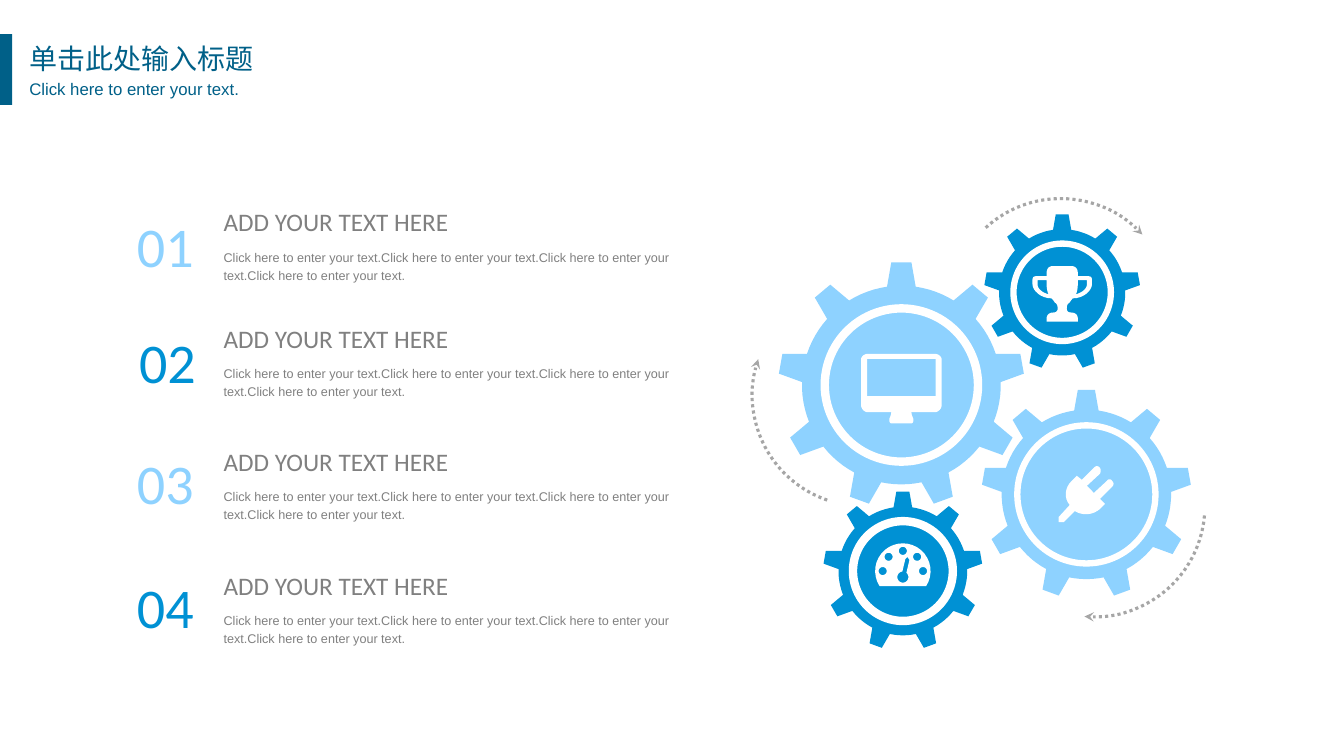
from dataclasses import dataclass
from math import cos, radians, sin

from pptx import Presentation
from pptx.dml.color import RGBColor
from pptx.enum.dml import MSO_LINE
from pptx.enum.shapes import MSO_SHAPE
from pptx.enum.text import MSO_ANCHOR, MSO_AUTO_SIZE, PP_ALIGN
from pptx.oxml.ns import qn
from pptx.util import Emu, Inches, Pt
from lxml import etree

ARC, OVAL, RECT = MSO_SHAPE.ARC, MSO_SHAPE.OVAL, MSO_SHAPE.RECTANGLE
LEFT, CENTER, JUSTIFY = PP_ALIGN.LEFT, PP_ALIGN.CENTER, PP_ALIGN.JUSTIFY
TOP, BOTTOM = MSO_ANCHOR.TOP, MSO_ANCHOR.BOTTOM
GROW = MSO_AUTO_SIZE.SHAPE_TO_FIT_TEXT
DOTTED = MSO_LINE.ROUND_DOT

WIDTH, HEIGHT = Inches(13.33), Inches(7.5)
ROWS = 75
CELL = HEIGHT / ROWS  # columns and rows are equally wide
SECTION_LAYOUT = 2

Point = tuple[float, float]
Contour = list[Point]


@dataclass(frozen=True)
class Theme:
    navy: RGBColor = RGBColor(0x00, 0x60, 0x88)
    blue: RGBColor = RGBColor(0x00, 0x91, 0xD4)
    sky: RGBColor = RGBColor(0x8E, 0xD2, 0xFF)
    gray: RGBColor = RGBColor(0x80, 0x80, 0x80)
    arrow: RGBColor = RGBColor(0xA6, 0xA6, 0xA6)
    white: RGBColor = RGBColor(0xFF, 0xFF, 0xFF)
    title_size: int = 20
    subtitle_size: int = 12
    number_size: int = 40
    heading_size: int = 18
    body_size: int = 9


THEME = Theme()


@dataclass(frozen=True)
class TextStyle:
    size: int
    font: str
    color: RGBColor
    align: PP_ALIGN = LEFT
    anchor: MSO_ANCHOR = TOP
    line_spacing: float = 1
    space_before: float = 0
    insets: Point = (1, 0.5)


@dataclass(frozen=True)
class Item:
    number: str
    color: RGBColor
    number_at: Point
    heading_row: float
    body_row: float


@dataclass(frozen=True)
class Gear:
    center: Point
    radius: float
    ring: float
    ring_width: float
    color: RGBColor


@dataclass(frozen=True)
class TurnArrow:
    left: float
    top: float
    rotation: float


TITLE = TextStyle(THEME.title_size, "Noto Sans CJK SC", THEME.navy)
SUBTITLE = TextStyle(THEME.subtitle_size, "Arial", THEME.navy, JUSTIFY, TOP, 1.2, 0.2, (0.4, 0.4))
HEADING = TextStyle(THEME.heading_size, "Calibri", THEME.gray)
BODY = TextStyle(THEME.body_size, "Arial", THEME.gray, LEFT, TOP, 1.2, 0.2)
PROMPT = "Click here to enter your text."

ITEMS = [
    Item("01", THEME.sky, (12.3, 21), 20, 24),
    Item("02", THEME.blue, (12.5, 32.5), 31.6, 35.5),
    Item("03", THEME.sky, (12.3, 44.5), 43.8, 47.7),
    Item("04", THEME.blue, (12.3, 56.8), 56.1, 60),
]
GEARS = [
    Gear((89.4, 38.2), 12.2, 7.6, 6, THEME.sky),
    Gear((107.75, 49.05), 10.4, 6.85, 4.5, THEME.sky),
    Gear((89.55, 56.65), 7.9, 4.95, 6, THEME.blue),
    Gear((105.35, 29), 7.75, 4.83, 4.5, THEME.blue),
]
ARROWS = [TurnArrow(94.2, 19.7, 317.5), TurnArrow(74.6, 28.2, 198.9), TurnArrow(97.5, 39.2, 94.9)]
ARROW_SPAN = 22


def emu(cells: float) -> Emu:
    return Emu(round(cells * CELL))


def curved(*steps: tuple[float, ...]) -> Contour:
    """Flatten steps: two numbers are a line's end, six a cubic Bézier."""
    points: Contour = []
    for s in steps:
        if len(s) == 2:
            points.append(s)
            continue
        x0, y0 = points[-1]
        for i in range(1, 9):
            t = i / 8
            u = 1 - t
            weights = 3 * u * u * t, 3 * u * t * t, t ** 3
            points.append((u ** 3 * x0 + sum(w * x for w, x in zip(weights, s[::2])),
                           u ** 3 * y0 + sum(w * y for w, y in zip(weights, s[1::2]))))
    return points


def arc(cx: float, cy: float, radius: float, start: float, end: float, steps: int = 24) -> Contour:
    angles = [radians(start + (end - start) * i / steps) for i in range(steps + 1)]
    return [(cx + radius * cos(a), cy + radius * sin(a)) for a in angles]


def mirrored(half: Contour) -> Contour:
    return [(-x, y) for x, y in reversed(half)]


def gear_outline(radius: float) -> Contour:
    """Nine tapered teeth joined by arcs of the root circle."""
    root, tip_half, root_half, pitch = 0.808 * radius, 4.7, 8.3, 40
    outline: Contour = []
    for tooth in range(9):
        a = tooth * pitch - 90
        outline += arc(0, 0, radius, a - tip_half, a + tip_half, 1)
        outline += arc(0, 0, root, a + root_half, a + pitch - root_half, 6)
    return outline


def monitor() -> list[Contour]:
    half = curved((0, -3.1), (3.3, -3.1), (3.6, -3.1, 4, -2.9, 4, -2.5), (4, 2),
                  (4, 2.3, 3.7, 2.7, 3.3, 2.7), (1, 2.7), (1, 3, 1.2, 3.3, 1.2, 3.4),
                  (1.2, 3.7, 1.1, 3.8, 1, 3.8), (0, 3.8))
    screen = [(-3.4, -2.6), (-3.4, 1.1), (3.4, 1.1), (3.4, -2.6)]
    return [half + mirrored(half), screen]


def trophy() -> list[Contour]:
    half = curved((0, -2.6), (0.95, -2.6), (1.35, -2.6, 1.55, -2.3, 1.55, -1.9), (1.55, -1.6),
                  (2.55, -1.6), (2.85, -1.6, 2.95, -1.5, 2.95, -1.2), (2.95, -0.8),
                  (2.95, -0.2, 2.15, 0.6, 1.05, 0.6), (0.85, 0.8, 0.75, 1, 0.75, 1),
                  (0.55, 1.1, 0.45, 1.3, 0.45, 1.6), (0.45, 1.8, 0.55, 2, 0.85, 2),
                  (1.25, 2, 1.55, 2.2, 1.55, 2.6), (1.55, 2.9), (0, 2.9))
    handle = curved((1.55, -1.2), (1.55, -0.6, 1.55, -0.2, 1.35, 0.2),
                    (2.05, 0, 2.45, -0.4, 2.45, -0.8), (2.45, -1.2))
    return [half + mirrored(half), handle, mirrored(handle)]


def gauge() -> list[Contour]:
    dome = arc(0, 0, 2.75, 147, 393)
    dots = [arc(2 * cos(radians(a)), 2 * sin(radians(a)), 0.4, 360, 0) for a in range(180, 361, 45)]
    needle = arc(0, 0.6, 0.55, -50, 265) + [(0.25, -1.2), (0.45, -1.4), (0.65, -1.1)]
    return [dome, *dots, needle[::-1]]


def plug() -> list[Contour]:
    return [curved((2.55, -0.75), (1.35, 0.45), (1.85, 0.95), (1.35, 1.45),
                   (0.65, 2.05, -0.35, 2.15, -1.15, 1.65), (-2.25, 2.75), (-2.75, 2.75),
                   (-2.75, 2.25), (-1.65, 1.05), (-2.25, 0.35, -2.15, -0.65, -1.45, -1.35),
                   (-0.95, -1.85), (-0.45, -1.45), (0.75, -2.65),
                   (0.95, -2.85, 1.15, -2.85, 1.35, -2.65), (1.45, -2.45, 1.45, -2.25, 1.35, -2.05),
                   (0.05, -0.85), (0.75, -0.15), (2.05, -1.35),
                   (2.15, -1.55, 2.45, -1.55, 2.55, -1.35), (2.75, -1.15, 2.75, -0.95, 2.55, -0.75))]


def paint(sp, color: RGBColor) -> None:
    sp.shadow.inherit = False
    sp.fill.solid()
    sp.fill.fore_color.rgb = color
    sp.line.fill.background()


def draw_outline(shapes, contours: list[Contour], center: Point, color: RGBColor) -> None:
    cx, cy = center
    placed = [[(emu(cx + x), emu(cy + y)) for x, y in c] for c in contours]
    builder = shapes.build_freeform(*placed[0][0])
    for i, points in enumerate(placed):
        if i:
            builder.move_to(*points[0])
        builder.add_line_segments(points[1:], close=True)
    paint(builder.convert_to_shape(), color)


def draw_gear(shapes, gear: Gear) -> None:
    group = shapes.add_group_shape().shapes
    draw_outline(group, [gear_outline(gear.radius)], gear.center, gear.color)
    (cx, cy), r = gear.center, gear.ring
    sp = group.add_shape(OVAL, emu(cx - r), emu(cy - r), emu(2 * r), emu(2 * r))
    paint(sp, gear.color)
    sp.line.color.rgb = THEME.white
    sp.line.width = Pt(gear.ring_width)


def draw_arrow(shapes, arrow: TurnArrow) -> None:
    sp = shapes.add_shape(ARC, emu(arrow.left), emu(arrow.top), emu(ARROW_SPAN), emu(ARROW_SPAN))
    sp.rotation = arrow.rotation
    sp.shadow.inherit = False
    sp.fill.background()
    sp.line.color.rgb = THEME.arrow
    sp.line.width = Pt(2.25)
    sp.line.dash_style = DOTTED
    etree.SubElement(sp.line._get_or_add_ln(), qn("a:tailEnd"), type="stealth")


def write(sp, box: tuple[float, float, float, float], text: str, style: TextStyle) -> None:
    sp.left, sp.top, sp.width, sp.height = map(emu, box)
    tf = sp.text_frame
    tf.word_wrap, tf.auto_size, tf.vertical_anchor = True, GROW, style.anchor
    tf.margin_left = tf.margin_right = emu(style.insets[0])
    tf.margin_top = tf.margin_bottom = emu(style.insets[1])
    p = tf.paragraphs[0]
    p.alignment, p.line_spacing = style.align, style.line_spacing
    p.space_before = Pt(style.size * style.space_before)
    r = p.add_run()
    r.text = text
    r.font.size, r.font.name, r.font.bold = Pt(style.size), style.font, False
    r.font.color.rgb = style.color
    etree.SubElement(r._r.get_or_add_rPr(), qn("a:ea"), typeface=style.font)


def draw_item(shapes, item: Item) -> None:
    number = TextStyle(THEME.number_size, "Calibri", item.color, CENTER, BOTTOM, 1, 0.2, (0, 0))
    for box, text, style in [((*item.number_at, 8.2, 6.7), item.number, number),
                             ((21.2, item.body_row, 46.4, 4.6), PROMPT * 4, BODY),
                             ((21.2, item.heading_row, 34.3, 4), "ADD YOUR TEXT HERE", HEADING)]:
        write(shapes.add_textbox(0, 0, 0, 0), box, text, style)


def main() -> None:
    prs = Presentation()
    prs.slide_width, prs.slide_height = WIDTH, HEIGHT
    slide = prs.slides.add_slide(prs.slide_layouts[SECTION_LAYOUT])
    shapes = slide.shapes
    write(shapes.title, (1.9, 3.6, 25.9, 4.6), "单击此处输入标题", TITLE)
    write(slide.placeholders[1], (2.5, 7, 24.7, 3.2), PROMPT, SUBTITLE)
    paint(shapes.add_shape(RECT, 0, emu(3.4), emu(1.2), emu(7)), THEME.navy)
    for gear in GEARS:
        draw_gear(shapes, gear)
    for arrow in ARROWS:
        draw_arrow(shapes, arrow)
    for gear, icon in zip(GEARS, (monitor, plug, gauge, trophy)):
        draw_outline(shapes, icon(), gear.center, THEME.white)
    for item in ITEMS:
        draw_item(shapes, item)
    prs.save("out.pptx")


if __name__ == "__main__":
    main()
